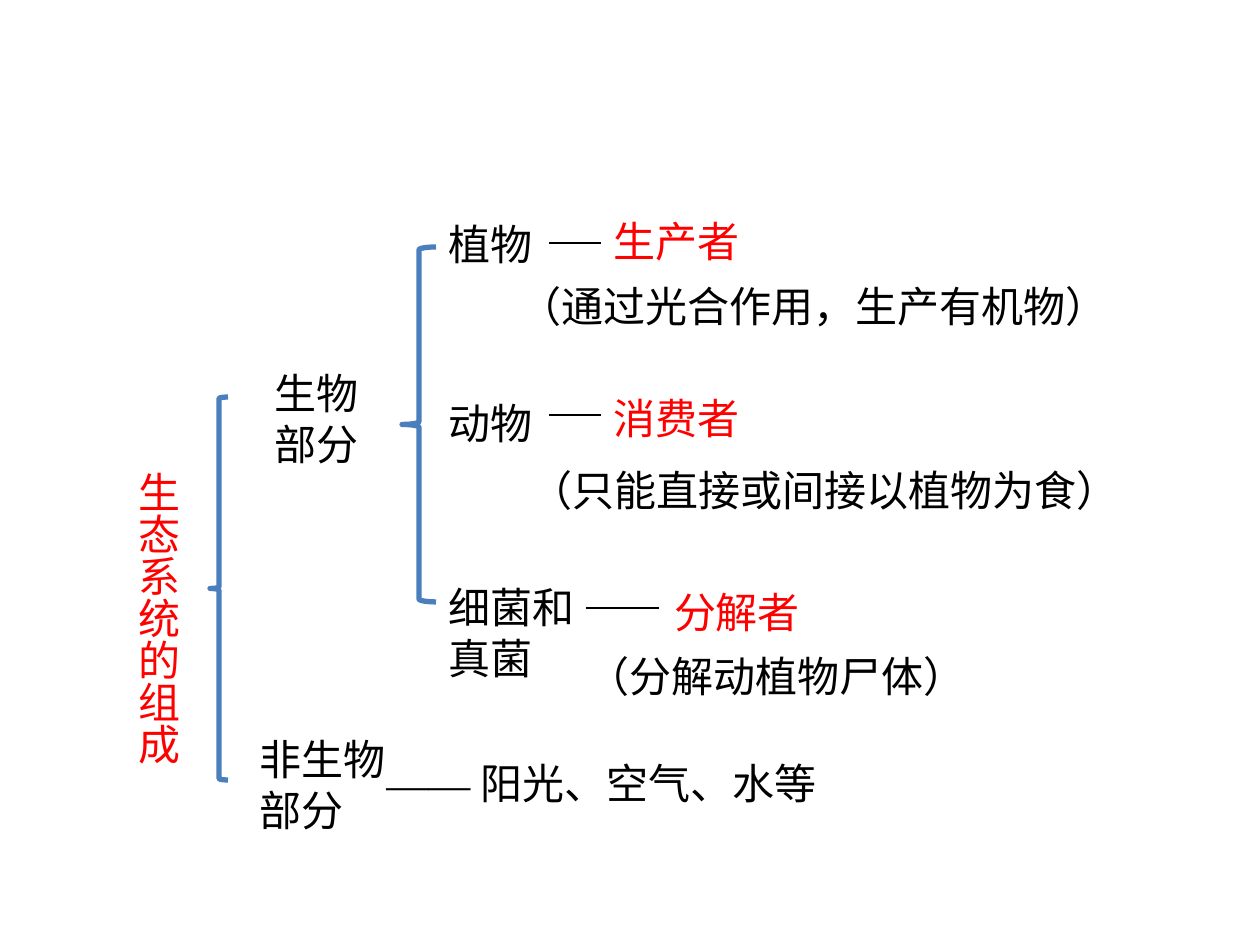
from lxml import etree
from pptx import Presentation
from pptx.dml.color import RGBColor
from pptx.enum.shapes import MSO_CONNECTOR, MSO_SHAPE
from pptx.enum.text import MSO_ANCHOR, MSO_AUTO_SIZE, PP_ALIGN
from pptx.oxml.ns import qn
from pptx.util import Emu, Pt

STRAIGHT = MSO_CONNECTOR.STRAIGHT
LEFT_BRACE = MSO_SHAPE.LEFT_BRACE
TOP = MSO_ANCHOR.TOP
NO_AUTOFIT = MSO_AUTO_SIZE.NONE
LEFT = PP_ALIGN.LEFT

PX = 914400 // 126
THEME = {
    "black": RGBColor(0, 0, 0),
    "red": RGBColor(255, 0, 0),
    "blue": RGBColor(0x4B, 0x7E, 0xBC),
    "size": Pt(24),
    "spacing": Pt(29),
    "rule": Pt(1.5),
    "brace": Pt(3),
    "sans": "Noto Sans CJK SC",
    "serif": "Times New Roman",
}
FRAME_FORMAT = {
    "word_wrap": True,
    "auto_size": NO_AUTOFIT,
    "vertical_anchor": TOP,
    "margin_left": Emu(13 * PX),
    "margin_right": Emu(13 * PX),
    "margin_top": Emu(10 * PX),
    "margin_bottom": Emu(0),
}
PARA_FORMAT = {"alignment": LEFT, "line_spacing": THEME["spacing"], "space_before": Pt(0)}


def scaled(*lengths):
    return [Emu(length * PX) for length in lengths]


def write(box, spans, color):
    frame = box.text_frame
    for name, value in FRAME_FORMAT.items():
        setattr(frame, name, value)
    para = frame.paragraphs[0]
    for name, value in PARA_FORMAT.items():
        setattr(para, name, value)
    for text, font_name in spans:
        span = para.add_run()
        span.text = text
        font_format = {"name": THEME[font_name], "size": THEME["size"], "bold": False}
        for name, value in font_format.items():
            setattr(span.font, name, value)
        span.font.color.rgb = THEME[color]
        east_asian = etree.SubElement(span.font._element, qn("a:ea"))
        east_asian.set("typeface", THEME[font_name])


deck = Presentation()
deck.slide_width, deck.slide_height = scaled(1260, 945)
page = deck.slides.add_slide(deck.slide_layouts[5])

title = page.shapes.title
title.left, title.top, title.width, title.height = scaled(120, 462, 77, 331)
write(title, [("生态系统的组成", "sans")], "red")
title.text_frame._txBody.bodyPr.set("vert", "eaVert")

labels = [
    ((262, 357, 132, 115), [("生物部分", "sans")], "black"),
    ((247, 723, 163, 115), [("非生物部分", "sans")], "black"),
    ((363, 747, 529, 64), [(" —— ", "serif"), ("阳光、空气、水等", "sans")], "black"),
    ((436, 208, 149, 64), [("植物", "sans")], "black"),
    ((436, 387, 149, 64), [("动物", "sans")], "black"),
    ((436, 571, 155, 115), [("细菌和真菌", "sans")], "black"),
    ((601, 205, 221, 64), [("生产者", "sans")], "red"),
    ((601, 382, 221, 64), [("消费者", "sans")], "red"),
    ((661, 576, 231, 64), [("分解者", "sans")], "red"),
    ((507, 270, 753, 64), [("（通过光合作用，生产有机物）", "sans")], "black"),
    ((518, 454, 735, 64), [("（只能直接或间接以植物为食）", "sans")], "black"),
    ((575, 640, 567, 64), [("（分解动植物尸体）", "sans")], "black"),
]
for bounds, spans, color in labels:
    write(page.shapes.add_textbox(*scaled(*bounds)), spans, color)

for start, end, height in [(549, 601, 243), (549, 601, 415), (586, 659, 608)]:
    rule = page.shapes.add_connector(STRAIGHT, *scaled(start, height, end, height))
    rule.line.color.rgb = THEME["black"]
    rule.line.width = THEME["rule"]
    etree.SubElement(rule._element.spPr, qn("a:effectLst"))

for bounds in [(210, 397, 18, 383), (402, 247, 34, 355)]:
    brace = page.shapes.add_shape(LEFT_BRACE, *scaled(*bounds))
    brace.shadow.inherit = False
    brace.fill.background()
    brace.line.color.rgb = THEME["blue"]
    brace.line.width = THEME["brace"]

deck.save("out.pptx")
